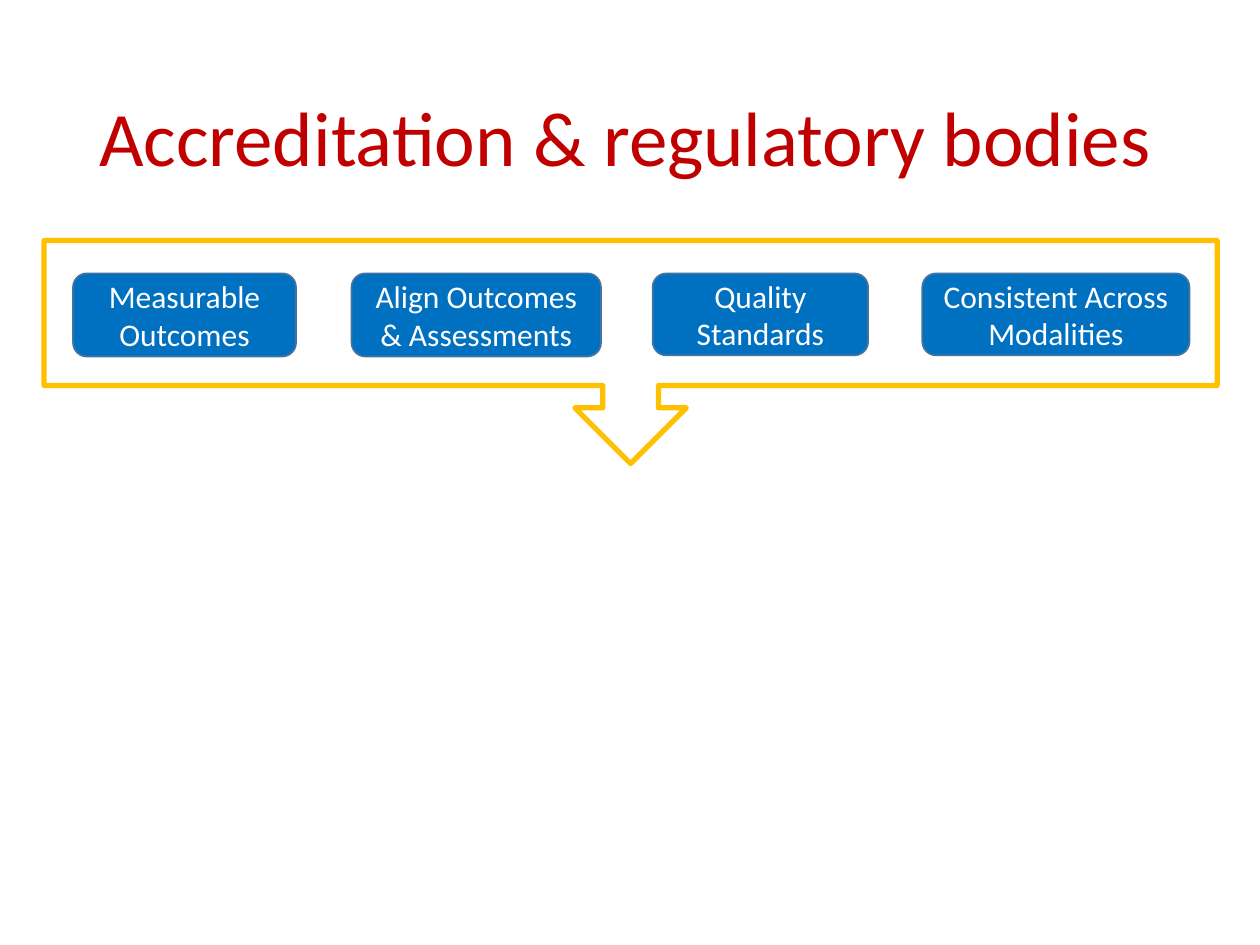
from pptx import Presentation
from pptx.dml.color import RGBColor
from pptx.enum.shapes import MSO_SHAPE
from pptx.enum.text import MSO_ANCHOR, PP_ALIGN
from pptx.util import Inches, Pt

deck = Presentation()
deck.slide_width, deck.slide_height = Inches(10), Inches(7.5)
slide = deck.slides.add_slide(deck.slide_layouts[6])
cell = deck.slide_width / 100


def paint(part, color):
    part.solid()
    part.fore_color.rgb = RGBColor.from_string(color)


def write(shape, text, size, color, align):
    frame = shape.text_frame
    frame.word_wrap = True
    frame.vertical_anchor = MSO_ANCHOR.MIDDLE
    line = frame.paragraphs[0]
    line.text = text
    line.alignment = align
    line.font.name = "Calibri"
    line.font.size = Pt(size)
    paint(line.font.fill, color)
    return line


title = slide.shapes.add_textbox(*[int(n * cell) for n in (6.9, 4, 86.2, 14.5)])
head = write(title, "Accreditation & regulatory bodies", 44, "C00000", PP_ALIGN.LEFT)
head.line_spacing = 0.9

frame = slide.shapes.add_shape(
    MSO_SHAPE.DOWN_ARROW_CALLOUT, *[int(n * cell) for n in (3.5, 19.1, 93.1, 17.7)]
)
frame.shadow.inherit = False
frame.fill.background()
paint(frame.line.fill, "FFC000")
frame.line.width = Pt(3)

goals = [
    ("Measurable Outcomes", 5.8, 17.7, 6.6),
    ("Align Outcomes & Assessments", 27.9, 19.8, 6.6),
    ("Quality Standards", 51.8, 17.1, 6.5),
    ("Consistent Across Modalities", 73.2, 21.2, 6.5),
]
for text, left, width, height in goals:
    box = slide.shapes.add_shape(
        MSO_SHAPE.ROUNDED_RECTANGLE,
        *[int(n * cell) for n in (left, 21.7, width, height)],
    )
    box.shadow.inherit = False
    paint(box.fill, "0070C0")
    paint(box.line.fill, "43739E")
    box.line.width = Pt(1)
    write(box, text, 18, "FFFFFF", PP_ALIGN.CENTER)

deck.save("out.pptx")
